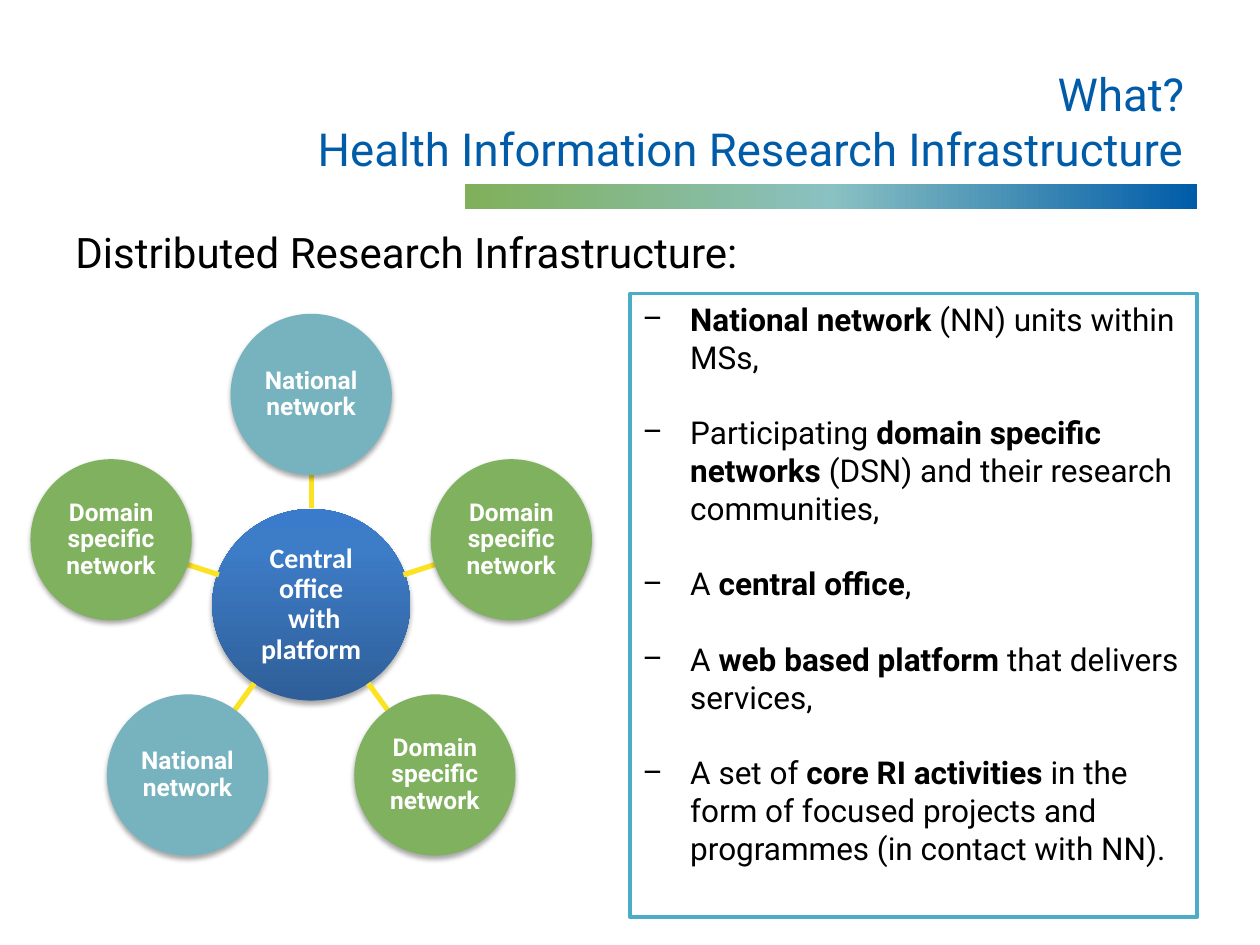
import math
from lxml import etree
from pptx import Presentation, util as u
from pptx.dml.color import RGBColor
from pptx.enum import shapes, text
from pptx.oxml.ns import qn

BLUE = RGBColor(0x00, 0x5C, 0xA9)
TEAL = RGBColor(0x77, 0xB3, 0xBF)
GREEN = RGBColor(0x80, 0xB1, 0x5E)
YELLOW = RGBColor(0xFB, 0xE3, 0x23)
CYAN = RGBColor(0x4B, 0xAC, 0xC6)
BLACK = RGBColor(0, 0, 0)
WHITE = RGBColor(255, 255, 255)
BAR_STOPS = [(0, RGBColor(0x80, 0xB0, 0x59)), (50, RGBColor(0x8A, 0xC1, 0xC2)), (100, BLUE)]
HUB_STOPS = [(0, RGBColor(0x2F, 0x5F, 0x99)), (80, RGBColor(0x3D, 0x7C, 0xC7)),
             (100, RGBColor(0x3A, 0x7C, 0xCB))]

# Content
TITLE = "What?\vHealth Information Research Infrastructure"
SUBTITLE = "Distributed Research Infrastructure:"
HUB = "Central office\v with platform"
NATIONAL = ("National network", TEAL)
DOMAIN = ("Domain specific network", GREEN)
SATELLITES = [NATIONAL, DOMAIN, DOMAIN, NATIONAL, DOMAIN]  # clockwise from the top
COMPONENTS = [  # before bold, bold, after bold
    ("", "National network ", "(NN) units within MSs,"),
    ("Participating ", "domain specific networks", " (DSN) and their research communities,"),
    ("A ", "central office", ","),
    ("A ", "web based platform", " that delivers services,"),
    ("A set of ", "core RI activities",
     " in the form of focused projects and programmes (in contact with NN)."),
]

# Layout, in inches
WIDTH, HEIGHT = 10, 7.5
MARGIN = 0.5
CONTENT = WIDTH - 2 * MARGIN
CENTER_X, CENTER_Y = 2.47, 4.8
ORBIT = 1.67
HUB_SIZE = (1.57, 1.52)
SATELLITE_SIZE = (1.28, 1.28)
SPOKE_START, SPOKE_END = 0.77, 1.03


def style(font, name, size, color, bold=False):
    font.name, font.size, font.bold = name, u.Pt(size), bold
    font.color.rgb = color


def add_shape(slide, kind, left, top, width, height):
    shape = slide.shapes.add_shape(kind, *map(u.Inches, (left, top, width, height)))
    shape.shadow.inherit = False
    shape.line.fill.background()
    return shape


def fill_gradient(shape, stops, angle):
    shape.fill.background()
    properties = shape.fill._xPr
    gradient = etree.Element(qn("a:gradFill"), rotWithShape="1")
    stop_list = etree.SubElement(gradient, qn("a:gsLst"))
    for position, color in stops:
        stop = etree.SubElement(stop_list, qn("a:gs"), pos=str(position * 1000))
        etree.SubElement(stop, qn("a:srgbClr"), val=str(color))
    etree.SubElement(gradient, qn("a:lin"), ang=str(angle * 60000), scaled="0")
    properties.replace(properties.find(qn("a:noFill")), gradient)


def add_shadow(shape):
    effects = shape._element.spPr.find(qn("a:effectLst"))
    shadow = etree.SubElement(effects, qn("a:outerShdw"), blurRad=str(u.Pt(3.1)),
                              dist=str(u.Pt(1.8)), dir="5400000", rotWithShape="0")
    color = etree.SubElement(shadow, qn("a:srgbClr"), val="000000")
    etree.SubElement(color, qn("a:alpha"), val="35000")


def add_circle(slide, x, y, size, label, font_name, font_size):
    width, height = size
    circle = add_shape(slide, shapes.MSO_SHAPE.OVAL, x - width / 2, y - height / 2, width, height)
    add_shadow(circle)
    frame = circle.text_frame
    frame.margin_left = frame.margin_right = frame.margin_top = frame.margin_bottom = u.Inches(0.01)
    frame.vertical_anchor = text.MSO_ANCHOR.MIDDLE
    frame.text = label
    paragraph = frame.paragraphs[0]
    paragraph.alignment = text.PP_ALIGN.CENTER
    paragraph.line_spacing = 0.9
    for run in paragraph.runs:
        style(run.font, font_name, font_size, WHITE, True)
    return circle


def add_spoke(slide, dx, dy):
    ends = [u.Inches(origin + radius * step) for radius in (SPOKE_START, SPOKE_END)
            for origin, step in ((CENTER_X, dx), (CENTER_Y, dy))]
    spoke = slide.shapes.add_connector(shapes.MSO_CONNECTOR.STRAIGHT, *ends)
    spoke.line.color.rgb = YELLOW
    spoke.line.width = u.Pt(3)
    etree.SubElement(spoke._element.spPr, qn("a:effectLst"))


def add_dash(paragraph):
    properties = paragraph._p.get_or_add_pPr()
    properties.set("marL", str(u.Inches(0.38)))
    properties.set("indent", str(u.Inches(-0.38)))
    etree.SubElement(properties, qn("a:buFont"), typeface="Roboto")
    etree.SubElement(properties, qn("a:buChar"), char="–")


def main():
    presentation = Presentation()
    presentation.slide_width, presentation.slide_height = u.Inches(WIDTH), u.Inches(HEIGHT)
    slide = presentation.slides.add_slide(presentation.slide_layouts[5])

    # Title and gradient bar
    bar = add_shape(slide, shapes.MSO_SHAPE.RECTANGLE, 3.69, 1.46, 5.81, 0.2)
    fill_gradient(bar, BAR_STOPS, 0)
    title = slide.shapes.title
    title.left, title.top, title.width, title.height = map(u.Inches, (MARGIN, 0.3, CONTENT, 1.14))
    title.text_frame.text = TITLE
    title.text_frame.vertical_anchor = text.MSO_ANCHOR.BOTTOM
    title.text_frame.auto_size = text.MSO_AUTO_SIZE.NONE
    heading = title.text_frame.paragraphs[0]
    heading.alignment = text.PP_ALIGN.RIGHT
    for run in heading.runs:
        style(run.font, "Roboto", 26, BLUE)

    # Subtitle
    subtitle = slide.shapes.add_textbox(*map(u.Inches, (MARGIN, 1.75, CONTENT, 0.5)))
    subtitle.text_frame.word_wrap = True
    subtitle.text_frame.text = SUBTITLE
    style(subtitle.text_frame.paragraphs[0].runs[0].font, "Roboto", 24, BLACK)

    # Hub with satellites
    hub = add_circle(slide, CENTER_X, CENTER_Y, HUB_SIZE, HUB, "Calibri", 16)
    fill_gradient(hub, HUB_STOPS, 270)
    for index, (label, color) in enumerate(SATELLITES):
        angle = 2 * math.pi * index / len(SATELLITES)
        dx, dy = math.sin(angle), -math.cos(angle)
        add_spoke(slide, dx, dy)
        satellite = add_circle(slide, CENTER_X + ORBIT * dx, CENTER_Y + ORBIT * dy,
                               SATELLITE_SIZE, label, "Roboto", 14)
        satellite.fill.solid()
        satellite.fill.fore_color.rgb = color

    # Framed list of components
    panel = add_shape(slide, shapes.MSO_SHAPE.RECTANGLE, WIDTH / 2, 2.33, CONTENT / 2, 4.95)
    panel.fill.solid()
    panel.fill.fore_color.rgb = WHITE
    panel.line.color.rgb = CYAN
    panel.line.width = u.Pt(2)
    frame = panel.text_frame
    frame.word_wrap = True
    frame.vertical_anchor = text.MSO_ANCHOR.TOP
    for index, parts in enumerate(COMPONENTS):
        paragraph = frame.add_paragraph() if index else frame.paragraphs[0]
        add_dash(paragraph)
        paragraph.alignment = text.PP_ALIGN.LEFT
        paragraph.space_before = u.Pt(21.6 if index else 0)
        for part, bold in zip(parts, (False, True, False)):
            if part:
                run = paragraph.add_run()
                run.text = part
                style(run.font, "Roboto", 18, BLACK, bold)

    presentation.save("out.pptx")


if __name__ == "__main__":
    main()
